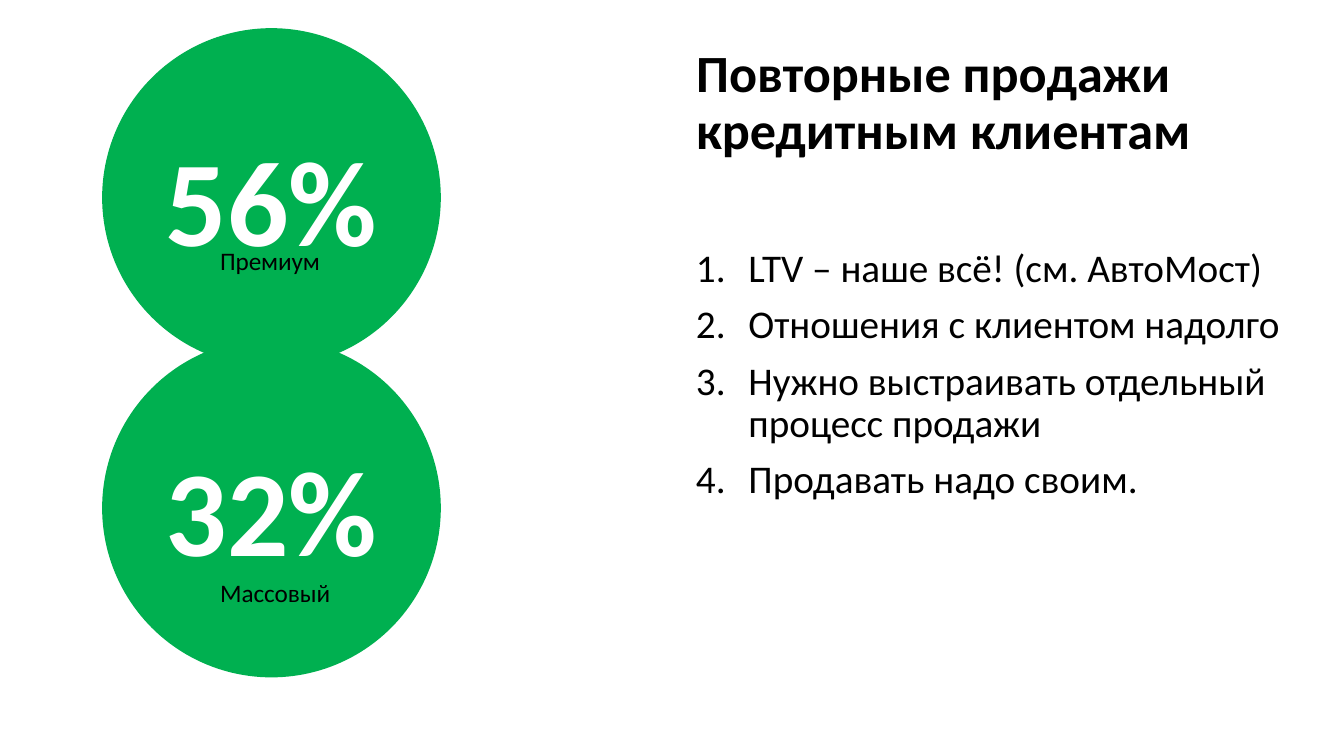
from lxml.etree import SubElement
from pptx import Presentation
from pptx.dml.color import RGBColor
from pptx.enum.shapes import MSO_SHAPE
from pptx.enum.text import MSO_ANCHOR, MSO_AUTO_SIZE, PP_ALIGN
from pptx.oxml.ns import qn
from pptx.util import Inches, Pt

GREEN = RGBColor(0x00, 0xB0, 0x50)
WHITE = RGBColor(0xFF, 0xFF, 0xFF)
BLACK = RGBColor(0x00, 0x00, 0x00)


def write(tf, lines, size, color=BLACK, bold=False, align=PP_ALIGN.LEFT,
          anchor=MSO_ANCHOR.TOP, wrap=True, spacing=1.0, before=0,
          numbered=False, fit=MSO_AUTO_SIZE.NONE):
    tf.word_wrap = wrap
    tf.auto_size = fit
    tf.vertical_anchor = anchor
    for i, line in enumerate(lines):
        p = tf.add_paragraph() if i else tf.paragraphs[0]
        p.alignment = align
        p.line_spacing = spacing
        p.space_before = Pt(before if i else 0)
        if numbered:
            pPr = p._p.get_or_add_pPr()
            pPr.set("marL", str(Inches(0.39)))
            pPr.set("indent", str(Inches(-0.39)))
            SubElement(pPr, qn("a:buFont"), typeface="+mj-lt")
            SubElement(pPr, qn("a:buAutoNum"), type="arabicPeriod")
        r = p.add_run()
        r.text = line
        r.font.name = "Calibri"
        r.font.size = Pt(size)
        r.font.bold = bold
        r.font.color.rgb = color


# 16:9 slide
prs = Presentation()
prs.slide_width, prs.slide_height = Inches(10), Inches(10 * 9 / 16)
s = prs.slides.add_slide(prs.slide_layouts[5])

# Title
title = s.shapes.title
title.left, title.top = Inches(5.08), Inches(0.23)
title.width, title.height = Inches(4.91), Inches(1.09)
write(title.text_frame, ["Повторные продажи кредитным клиентам"], 28,
      bold=True, anchor=MSO_ANCHOR.MIDDLE, spacing=0.9)

# Numbered list
body = s.shapes.add_textbox(Inches(5.08), Inches(1.8), Inches(4.72), Inches(3.77))
write(body.text_frame, [
    "LTV – наше всё! (см. АвтоМост)",
    "Отношения с клиентом надолго",
    "Нужно выстраивать отдельный процесс продажи",
    "Продавать надо своим.",
], 21, spacing=0.9, before=7.5, numbered=True)

# Share circles with segment labels
for share, top, segment, label_top, label_width in [
    ("56%", 0.21, "Премиум", 1.78, 0.96),
    ("32%", 2.52, "Массовый", 4.25, 1.03),
]:
    circle = s.shapes.add_shape(MSO_SHAPE.OVAL, Inches(0.76), Inches(top),
                                Inches(2.52), Inches(2.52))
    circle.shadow.inherit = False
    circle.fill.solid()
    circle.fill.fore_color.rgb = GREEN
    circle.line.fill.background()
    write(circle.text_frame, [share], 65, color=WHITE, bold=True,
          align=PP_ALIGN.CENTER, anchor=MSO_ANCHOR.MIDDLE)
    label = s.shapes.add_textbox(Inches(1.54), Inches(label_top),
                                 Inches(label_width), Inches(0.33))
    write(label.text_frame, [segment], 13.5, wrap=False,
          fit=MSO_AUTO_SIZE.SHAPE_TO_FIT_TEXT)

prs.save("out.pptx")
